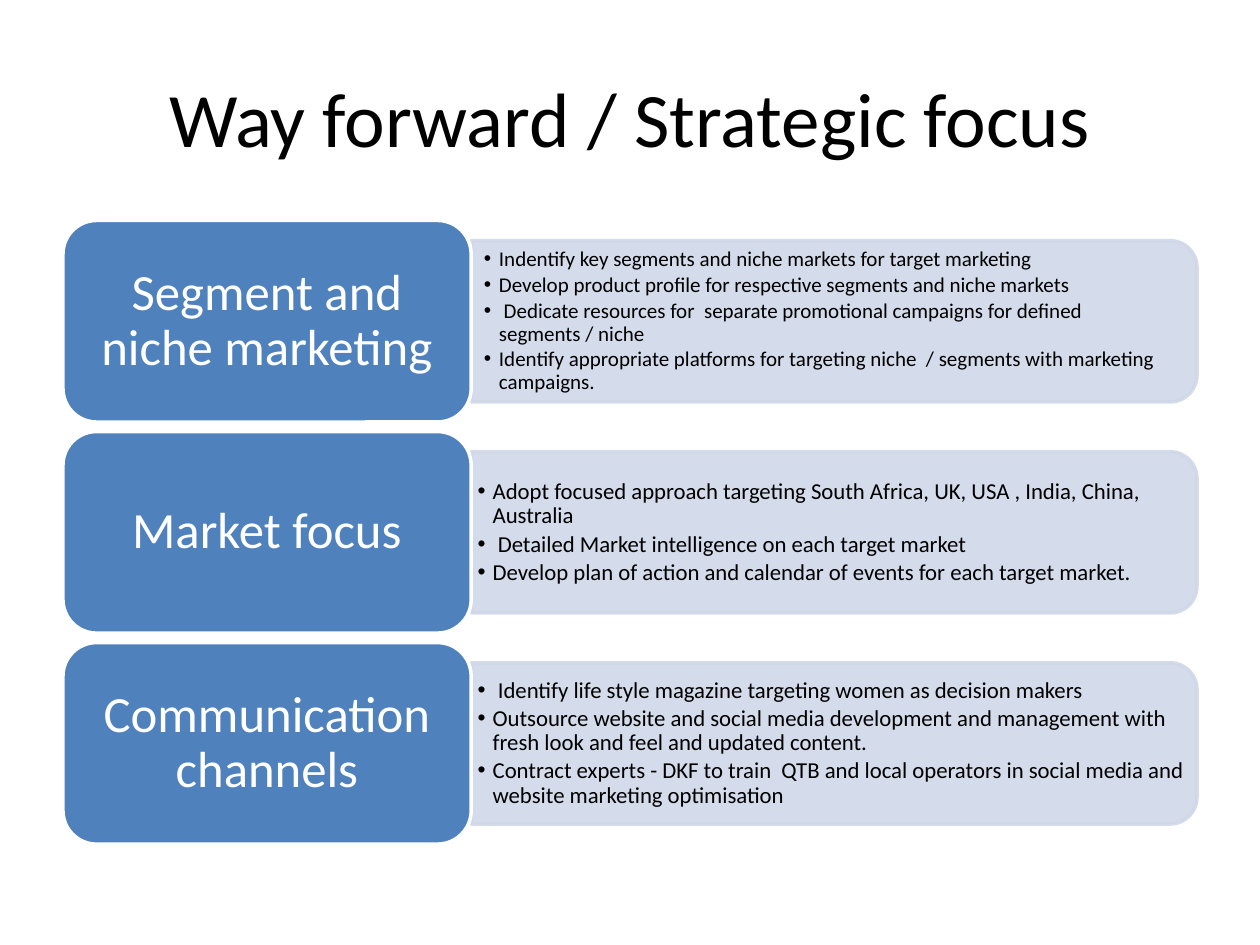
from lxml.etree import SubElement
from pptx import Presentation
from pptx.dml.color import RGBColor
from pptx.enum.shapes import MSO_SHAPE
from pptx.enum.text import MSO_ANCHOR, MSO_AUTO_SIZE, PP_ALIGN
from pptx.oxml.ns import qn
from pptx.util import Inches, Pt

COMPARISON_LAYOUT = 4
LEFT, LABEL_WIDTH, WIDTH = 5, 32.4, 90
TOP, ROW_HEIGHT, ROW_PITCH = 17.5, 16, 16.75
BAR_HEIGHT, LIST_WIDTH, LIST_HEIGHT = 12.8, 57, 11.5

ROWS = [
    ("Segment and niche marketing", 12, (0.1, 0.05), [
        "Indentify key segments and niche markets for target marketing",
        "Develop product profile for respective segments and niche markets",
        " Dedicate resources for  separate promotional campaigns for defined segments / niche",
        "Identify appropriate platforms for targeting niche  / segments with marketing campaigns.",
    ]),
    ("Market focus", 13, (0.05, 0.03), [
        "Adopt focused approach targeting South Africa, UK, USA , India, China, Australia",
        " Detailed Market intelligence on each target market",
        "Develop plan of action and calendar of events for each target market.",
    ]),
    ("Communication channels", 13, (0.05, 0.03), [
        " Identify life style magazine targeting women as decision makers",
        "Outsource website and social media development and management with fresh look and feel and updated content.",
        "Contract experts - DKF to train  QTB and local operators in social media and website marketing optimisation",
    ]),
]


def color(hex_string):
    return RGBColor.from_string(hex_string)


class SlideBuilder:
    font = "Calibri"
    dark, light, accent, pale = "000000", "FFFFFF", "4F81BD", "D0D8E8"
    columns, rows = 100, 75

    def __init__(self, presentation):
        self.column = presentation.slide_width / self.columns
        self.row = presentation.slide_height / self.rows
        layout = presentation.slide_layouts[COMPARISON_LAYOUT]
        self.slide = presentation.slides.add_slide(layout)
        self.bodies = list(self.slide.placeholders)[1:]

    def box(self, left, top, width, height):
        return (round(left * self.column), round(top * self.row),
                round(width * self.column), round(height * self.row))

    def place(self, shape, *cells):
        shape.left, shape.top, shape.width, shape.height = self.box(*cells)

    def format_text(self, shape, size, text_color, alignment, insets, after=0, spacing=1):
        frame = shape.text_frame
        frame.word_wrap = True
        frame.auto_size = MSO_AUTO_SIZE.NONE
        frame.vertical_anchor = MSO_ANCHOR.MIDDLE
        frame.margin_left = frame.margin_right = Inches(insets[0])
        frame.margin_top = frame.margin_bottom = Inches(insets[1])
        for paragraph in frame.paragraphs:
            paragraph.alignment = alignment
            paragraph.line_spacing = spacing
            paragraph.space_before = Pt(0)
            paragraph.space_after = Pt(after * size)
            for run in paragraph.runs:
                run.font.name = self.font
                run.font.size = Pt(size)
                run.font.bold = False
                run.font.color.rgb = color(text_color)

    def title(self, text):
        title = self.slide.shapes.title
        self.place(title, LEFT, 3, WIDTH, 12.5)
        title.text_frame.text = text
        self.format_text(title, 44, self.dark, PP_ALIGN.CENTER, (0.1, 0.05))

    def shape(self, kind, cells, fill, line):
        shape = self.slide.shapes.add_shape(kind, *self.box(*cells))
        shape.shadow.inherit = False
        shape.fill.solid()
        shape.fill.fore_color.rgb = color(fill)
        shape.line.color.rgb = color(line)
        shape.line.width = Pt(2)
        return shape

    def bar(self, middle):
        length = WIDTH - LABEL_WIDTH
        center = LEFT + LABEL_WIDTH + length / 2
        cells = (center - BAR_HEIGHT / 2, middle - length / 2, BAR_HEIGHT, length)
        bar = self.shape(MSO_SHAPE.ROUND_2_SAME_RECTANGLE, cells, self.pale, self.pale)
        bar.rotation = 90
        for rgb in bar._element.spPr.iter(qn("a:srgbClr")):
            SubElement(rgb, qn("a:alpha"), val="90000")

    def label(self, text, top):
        cells = (LEFT, top, LABEL_WIDTH, ROW_HEIGHT)
        label = self.shape(MSO_SHAPE.ROUNDED_RECTANGLE, cells, self.accent, self.light)
        label.text_frame.text = text
        self.format_text(label, 29, self.light, PP_ALIGN.CENTER, (0.12, 0.06), spacing=0.9)

    def bullets(self, items, middle, size, insets):
        body = self.bodies.pop(0)
        self.slide.shapes._spTree.append(body._element)
        self.place(body, LEFT + LABEL_WIDTH, middle - LIST_HEIGHT / 2, LIST_WIDTH, LIST_HEIGHT)
        body.text_frame.text = "\n".join(items)
        self.format_text(body, size, self.dark, PP_ALIGN.LEFT, insets, 0.15, 0.9)
        for paragraph in body.text_frame.paragraphs:
            properties = paragraph._p.get_or_add_pPr()
            properties.set("marL", str(Inches(0.12)))
            properties.set("indent", str(-Inches(0.12)))
            SubElement(properties, qn("a:buFont"), typeface="Arial")
            SubElement(properties, qn("a:buChar"), char="•")

    def remove_unused_bodies(self):
        for body in self.bodies:
            self.slide.shapes._spTree.remove(body._element)


def main():
    presentation = Presentation()
    presentation.slide_width, presentation.slide_height = Inches(10), Inches(7.5)
    builder = SlideBuilder(presentation)
    builder.title("Way forward / Strategic focus")
    for index, (label, size, insets, items) in enumerate(ROWS):
        top = TOP + index * ROW_PITCH
        middle = top + ROW_HEIGHT / 2
        builder.bar(middle)
        builder.bullets(items, middle, size, insets)
        builder.label(label, top)
    builder.remove_unused_bodies()
    presentation.save("out.pptx")


if __name__ == "__main__":
    main()
